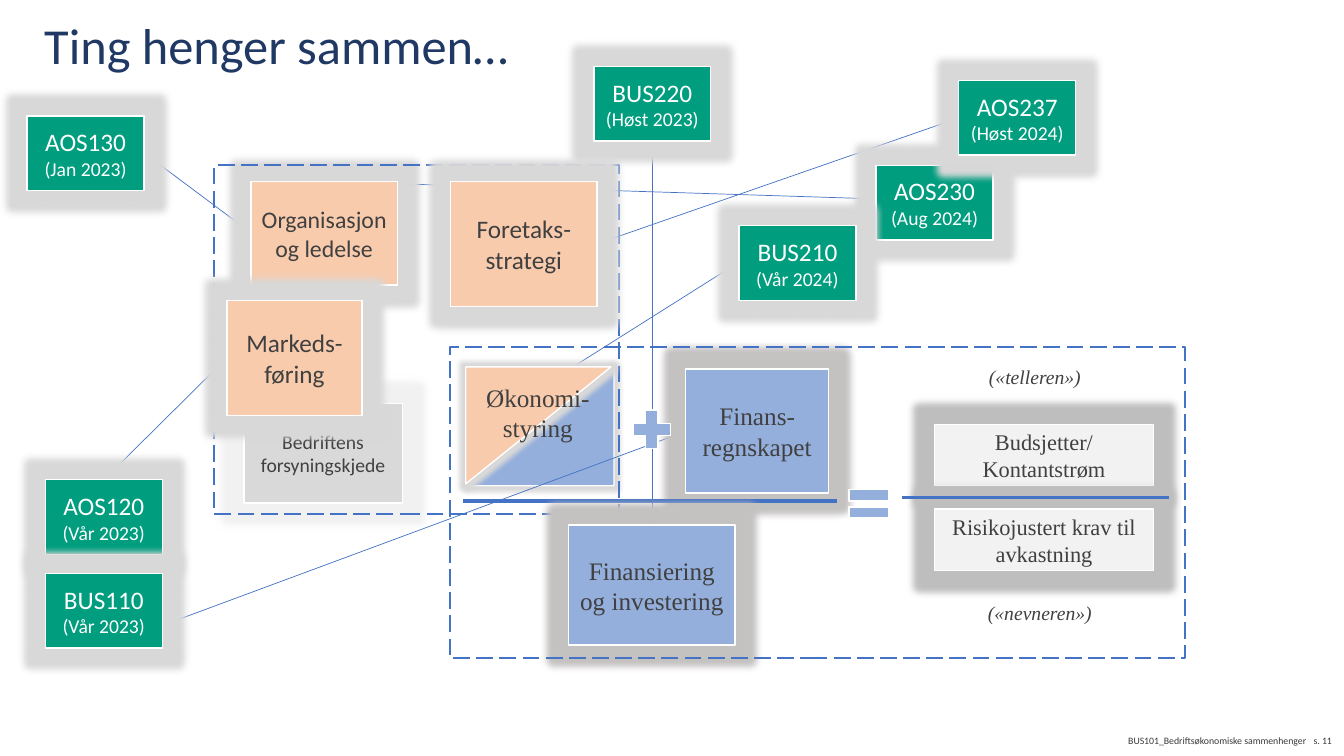
from dataclasses import dataclass
from functools import singledispatch
from typing import Any, Optional

from lxml.etree import SubElement
from pptx import Presentation
from pptx.dml.color import RGBColor
from pptx.enum.dml import MSO_LINE
from pptx.enum.shapes import MSO_CONNECTOR, MSO_SHAPE
from pptx.enum.text import MSO_ANCHOR, PP_ALIGN
from pptx.oxml.ns import qn
from pptx.util import Inches, Pt

WHITE = RGBColor(0xFF, 0xFF, 0xFF)
NAVY = RGBColor(0x20, 0x38, 0x64)
BLUE = RGBColor(0x44, 0x72, 0xC4)
SKY = RGBColor(0x94, 0xAF, 0xDC)
PEACH = RGBColor(0xF8, 0xCB, 0xAD)
GREEN = RGBColor(0x00, 0x9D, 0x7F)
INK = RGBColor(0x40, 0x40, 0x40)
DARK = RGBColor(0x3B, 0x38, 0x38)
PALE = RGBColor(0xF2, 0xF2, 0xF2)
LIGHT = RGBColor(0xD9, 0xD9, 0xD9)
WARM = RGBColor(0xC5, 0xC2, 0xC2)
GREY = RGBColor(0xBF, 0xBF, 0xBF)

SANS, SERIF = "Calibri", "Times New Roman"
HALO, RIM = 0.14, 0.1


@dataclass
class Box:
    at: tuple[float, float, float, float]
    fill: RGBColor
    rows: tuple[str, ...] = ()
    sizes: tuple[float, ...] = (18,)
    font: str = SANS
    ink: RGBColor = INK
    glow: Optional[RGBColor] = None
    reach: float = HALO
    kind: MSO_SHAPE = MSO_SHAPE.RECTANGLE
    turn: float = 0


@dataclass
class Frame:
    at: tuple[float, float, float, float]


@dataclass
class Line:
    start: tuple[float, float]
    end: tuple[float, float]
    width: float = 0.5


@dataclass
class Note:
    at: tuple[float, float, float, float]
    text: str
    size: float
    font: str = SERIF
    ink: RGBColor = INK
    align: PP_ALIGN = PP_ALIGN.LEFT
    anchor: MSO_ANCHOR = MSO_ANCHOR.TOP
    slant: bool = False
    wrap: bool = True
    inset: Optional[float] = None
    pitch: Optional[float] = None


def put(item: Any, **vals: Any) -> None:
    """Set each named format value on the item."""
    for name, val in vals.items():
        setattr(item, name, val)


def write(para: Any, text: str, size: float, font: str, ink: RGBColor,
          align: PP_ALIGN, slant: bool = False) -> None:
    run = para.add_run()
    run.text = text
    para.alignment = align
    put(run.font, size=Pt(size), name=font, italic=slant)
    run.font.color.rgb = ink


def shine(shape: Any, tint: RGBColor, reach: float) -> None:
    """Give the shape a soft halo."""
    effects = shape.element.spPr.find(qn("a:effectLst"))
    glow = SubElement(effects, qn("a:glow"), rad=str(Inches(reach)))
    SubElement(glow, qn("a:srgbClr"), val=str(tint))


@singledispatch
def draw(item: Any, shapes: Any) -> None:
    raise TypeError(item)


@draw.register
def _(item: Box, shapes: Any) -> None:
    shape = shapes.add_shape(item.kind, *map(Inches, item.at))
    shape.shadow.inherit = False
    shape.fill.solid()
    shape.fill.fore_color.rgb = item.fill
    shape.line.color.rgb = WHITE
    put(shape.line, width=Pt(1))
    shape.rotation = item.turn
    if item.kind == MSO_SHAPE.ISOSCELES_TRIANGLE:
        shape.adjustments[0] = 1
    if item.glow is not None:
        shine(shape, item.glow, item.reach)
    frame = shape.text_frame
    put(frame, word_wrap=True, vertical_anchor=MSO_ANCHOR.MIDDLE)
    for i, (row, size) in enumerate(zip(item.rows, item.sizes)):
        para = frame.add_paragraph() if i else frame.paragraphs[0]
        write(para, row, size, item.font, item.ink, PP_ALIGN.CENTER)


@draw.register
def _(item: Frame, shapes: Any) -> None:
    shape = shapes.add_shape(MSO_SHAPE.RECTANGLE, *map(Inches, item.at))
    shape.shadow.inherit = False
    shape.fill.background()
    shape.line.color.rgb = BLUE
    put(shape.line, width=Pt(1.5), dash_style=MSO_LINE.LONG_DASH)


@draw.register
def _(item: Line, shapes: Any) -> None:
    ends = map(Inches, item.start + item.end)
    line = shapes.add_connector(MSO_CONNECTOR.STRAIGHT, *ends)
    line.line.color.rgb = BLUE
    line.line.width = Pt(item.width)
    SubElement(line.element.spPr, qn("a:effectLst"))


@draw.register
def _(item: Note, shapes: Any) -> None:
    frame = shapes.add_textbox(*map(Inches, item.at)).text_frame
    put(frame, word_wrap=item.wrap, vertical_anchor=item.anchor)
    if item.inset is not None:
        for side in ("left", "top", "right", "bottom"):
            put(frame, **{f"margin_{side}": Inches(item.inset)})
    para = frame.paragraphs[0]
    para.line_spacing = item.pitch
    write(para, item.text, item.size, item.font, item.ink, item.align, item.slant)


def course(left: float, top: float, code: str, term: str) -> Box:
    return Box((left, top, 1.16, 0.74), GREEN, (code, f"({term})"), (18, 14),
               ink=WHITE, glow=LIGHT)


def topic(at: tuple[float, float, float, float], text: str, size: float = 18) -> Box:
    return Box(at, PEACH, (text,), (size,), glow=LIGHT)


def money(at: tuple[float, float, float, float], text: str) -> Box:
    return Box(at, SKY, (text,), font=SERIF, glow=WARM)


def term(top: float, text: str) -> Box:
    """One part of the fraction on the right."""
    return Box((9.27, top, 2.17, 0.61), PALE, (text,), (16,), SERIF, glow=GREY)


def wedge(left: float, top: float, fill: RGBColor, turn: float) -> Box:
    return Box((left, top, 1.44, 1.16), fill, glow=LIGHT, reach=RIM,
               kind=MSO_SHAPE.ISOSCELES_TRIANGLE, turn=turn)


def foot(left: float, width: float, text: str, align: PP_ALIGN) -> Note:
    return Note((left, 7.22, width, 0.26), text, 7, SANS, DARK, align,
                MSO_ANCHOR.MIDDLE, inset=0)


ITEMS = [
    wedge(4.65, 3.66, SKY, 0),
    Line((6.47, 5.21), (6.47, 1.39)),
    Line((1.03, 6.42), (6.8, 4.28)),
    Line((7.33, 2.6), (5.35, 3.85)),
    Line((2.25, 3.55), (1.03, 4.76)),
    Line((1.42, 1.51), (2.49, 2.31)),
    Line((9.85, 2.01), (3.22, 1.8)),
    Line((5.92, 2.42), (9.51, 1.17)),
    Box((2.42, 4, 1.57, 0.99), LIGHT, ("Bedriftens forsyningskjede",), (14,), glow=PALE),
    Note((0.34, 0.15, 10.49, 0.65), "Ting henger sammen…", 36, SANS, NAVY,
         anchor=MSO_ANCHOR.MIDDLE, pitch=0.9),
    topic((2.49, 1.8, 1.45, 1.03), "Organisasjon og ledelse", 17),
    Frame((2.12, 1.64, 4.02, 3.46)),
    money((6.8, 3.66, 1.42, 1.23), "Finans-regnskapet"),
    Line((4.59, 4.97), (8.3, 4.97), 2.25),
    Box((6.21, 4, 0.51, 0.52), SKY, kind=MSO_SHAPE.MATH_PLUS),
    money((5.64, 5.21, 1.65, 1.19), "Finansiering og investering"),
    Box((8.35, 4.76, 0.54, 0.48), SKY, kind=MSO_SHAPE.MATH_EQUAL),
    term(4.21, "Budsjetter/ Kontantstrøm"),
    term(5.05, "Risikojustert krav til avkastning"),
    Line((8.95, 4.94), (11.59, 4.94), 2.25),
    topic((4.47, 1.8, 1.45, 1.24), "Foretaks-strategi"),
    Frame((4.46, 3.44, 7.29, 3.09)),
    Note((9.71, 3.57, 1.12, 0.34), "(«telleren»)", 14, slant=True, wrap=False),
    Note((9.7, 5.91, 1.26, 0.34), "(«nevneren»)", 14, slant=True, wrap=False),
    topic((2.25, 2.98, 1.34, 1.14), "Markeds-føring"),
    wedge(4.62, 3.64, PEACH, 180),
    course(0.45, 4.76, "AOS120", "Vår 2023"),
    course(0.27, 1.15, "AOS130", "Jan 2023"),
    course(8.69, 1.64, "AOS230", "Aug 2024"),
    course(9.51, 0.8, "AOS237", "Høst 2024"),
    course(7.33, 2.24, "BUS210", "Vår 2024"),
    course(0.45, 5.69, "BUS110", "Vår 2023"),
    course(5.89, 0.66, "BUS220", "Høst 2023"),
    Note((4.63, 3.74, 1.41, 0.71), "Økonomi-styring", 18, align=PP_ALIGN.CENTER),
    foot(11.19, 2.14, "BUS101_Bedriftsøkonomiske sammenhenger", PP_ALIGN.LEFT),
    foot(12.95, 0.26, "s. 11", PP_ALIGN.RIGHT),
]


def main() -> None:
    deck = Presentation()
    put(deck, slide_width=Inches(13.33), slide_height=Inches(7.5))
    slide = deck.slides.add_slide(deck.slide_layouts[6])
    for item in ITEMS:
        draw(item, slide.shapes)
    deck.save("out.pptx")


if __name__ == "__main__":
    main()
